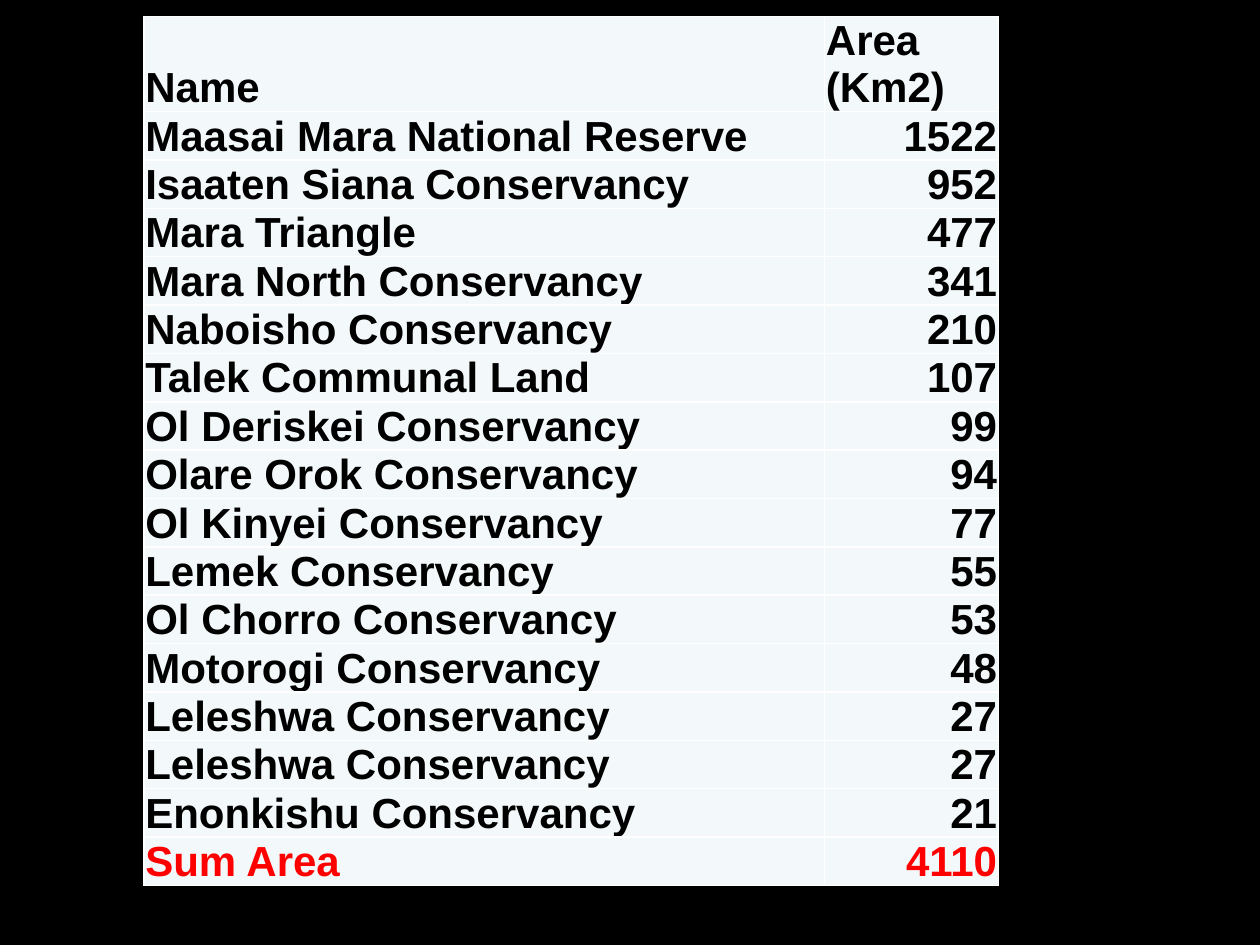
from dataclasses import dataclass

from lxml import etree
from pptx import Presentation
from pptx.dml.color import RGBColor
from pptx.enum.text import MSO_ANCHOR, PP_ALIGN
from pptx.oxml.ns import qn
from pptx.table import _Cell
from pptx.util import Cm, Pt

BOTTOM = MSO_ANCHOR.BOTTOM
LEFT, RIGHT = PP_ALIGN.LEFT, PP_ALIGN.RIGHT


@dataclass(frozen=True)
class Theme:
    font: str = "Arial"
    size: int = 24
    border_width: int = 1
    background: str = "000000"
    text: str = "000000"
    total: str = "FF0000"
    cell: str = "F3F9FA"
    border: str = "FFFFFF"


@dataclass(frozen=True)
class Territory:
    name: str
    area: int


THEME = Theme()
BLANK_LAYOUT = 6
COLUMN_WIDTHS = (Cm(13.72), Cm(3.51))
HEADER_HEIGHT, ROW_HEIGHT = Cm(0.99), Cm(0.86)
INSET = Cm(0.03)

TERRITORIES = [
    Territory("Maasai Mara National Reserve", 1522),
    Territory("Isaaten Siana Conservancy", 952),
    Territory("Mara Triangle", 477),
    Territory("Mara North Conservancy", 341),
    Territory("Naboisho Conservancy", 210),
    Territory("Talek Communal Land", 107),
    Territory("Ol Deriskei Conservancy", 99),
    Territory("Olare Orok Conservancy", 94),
    Territory("Ol Kinyei Conservancy", 77),
    Territory("Lemek Conservancy", 55),
    Territory("Ol Chorro Conservancy", 53),
    Territory("Motorogi Conservancy", 48),
    Territory("Leleshwa Conservancy", 27),
    Territory("Leleshwa Conservancy", 27),
    Territory("Enonkishu Conservancy", 21),
]


def write_text(cell: _Cell, text: str, *, color: str = THEME.text,
               align: PP_ALIGN = LEFT) -> None:
    paragraph = cell.text_frame.paragraphs[0]
    paragraph.alignment = align
    run = paragraph.add_run()
    run.text = text
    run.font.name = THEME.font
    run.font.size = Pt(THEME.size)
    run.font.bold = True
    run.font.color.rgb = RGBColor.from_string(color)


def style_cell(cell: _Cell) -> None:
    cell.vertical_anchor = BOTTOM
    cell.margin_left = cell.margin_right = cell.margin_top = INSET
    cell.margin_bottom = 0
    properties = cell._tc.get_or_add_tcPr()
    for side in ("lnL", "lnR", "lnT", "lnB"):
        line = etree.SubElement(properties, qn(f"a:{side}"), w=str(Pt(THEME.border_width)))
        fill = etree.SubElement(line, qn("a:solidFill"))
        etree.SubElement(fill, qn("a:srgbClr"), val=THEME.border)
    cell.fill.solid()
    cell.fill.fore_color.rgb = RGBColor.from_string(THEME.cell)


def main() -> None:
    presentation = Presentation()
    presentation.slide_width, presentation.slide_height = Cm(25.4), Cm(19.05)
    slide = presentation.slides.add_slide(presentation.slide_layouts[BLANK_LAYOUT])
    slide.background.fill.solid()
    slide.background.fill.fore_color.rgb = RGBColor.from_string(THEME.background)

    total = Territory("Sum Area", sum(territory.area for territory in TERRITORIES))
    records = [*TERRITORIES, total]
    row_count = len(records) + 1
    areas = slide.shapes.add_table(
        row_count, len(COLUMN_WIDTHS), Cm(2.9), Cm(0.33),
        sum(COLUMN_WIDTHS), HEADER_HEIGHT + ROW_HEIGHT * len(records),
    ).table
    areas.horz_banding = False
    for column, width in zip(areas.columns, COLUMN_WIDTHS):
        column.width = width
    for index, row in enumerate(areas.rows):
        row.height = ROW_HEIGHT if index else HEADER_HEIGHT
    for cell in areas.iter_cells():
        style_cell(cell)

    for column, heading in enumerate(("Name", "Area (Km2)")):
        write_text(areas.cell(0, column), heading)
    for index, record in enumerate(records, start=1):
        color = THEME.total if record is total else THEME.text
        write_text(areas.cell(index, 0), record.name, color=color)
        write_text(areas.cell(index, 1), str(record.area), color=color, align=RIGHT)

    presentation.save("out.pptx")


if __name__ == "__main__":
    main()
